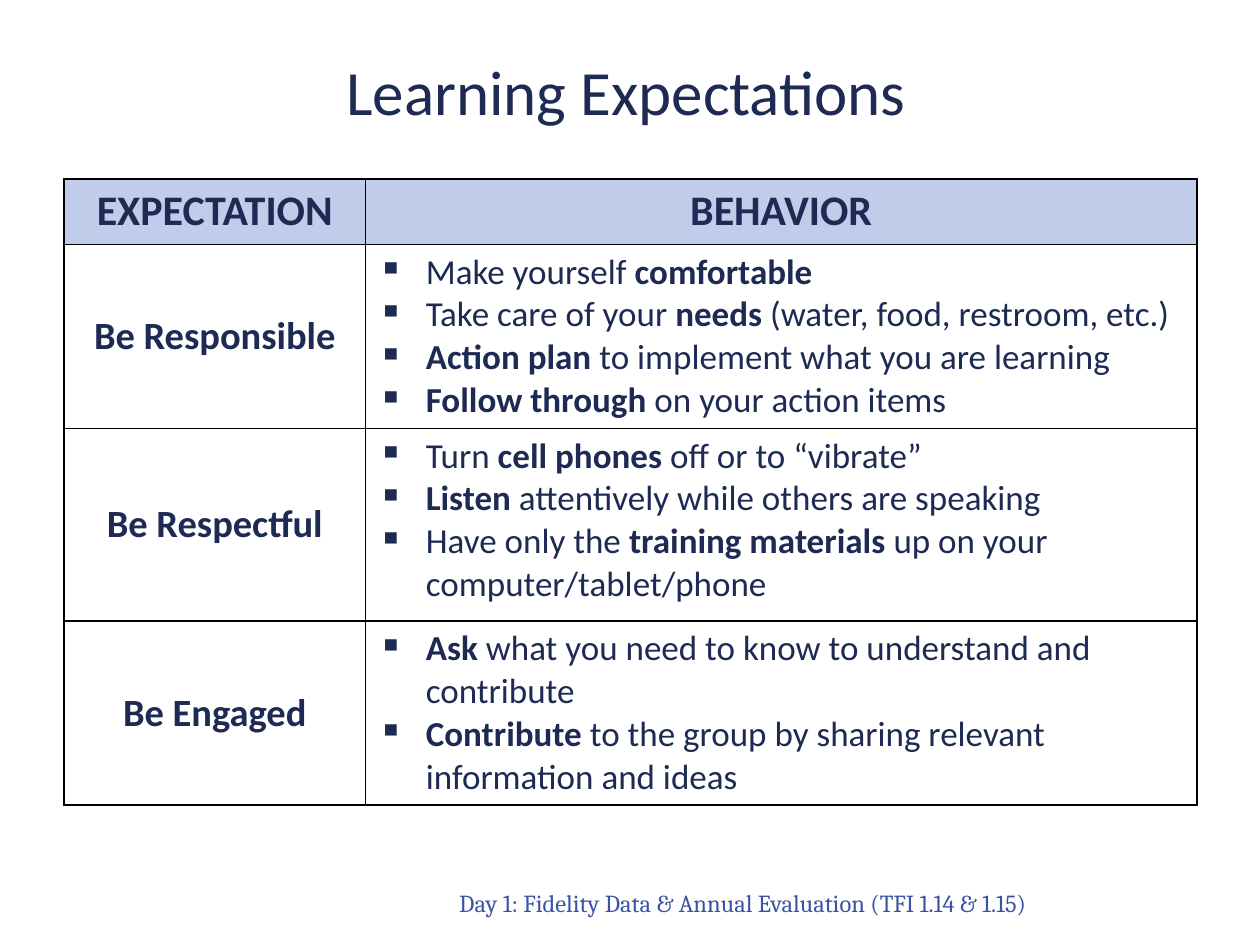
from lxml.etree import SubElement
from pptx import Presentation
from pptx.dml.color import RGBColor
from pptx.enum.text import MSO_ANCHOR as Anchor, PP_ALIGN as Align
from pptx.oxml.ns import qn
from pptx.util import Inches, Pt

COLORS = {"navy": "1D2A53", "blue": "3A53A5", "header": "C1CCEB",
          "white": "FFFFFF", "border": "000000"}

TITLE = "Learning Expectations"
FOOTER = "Day 1: Fidelity Data & Annual Evaluation (TFI 1.14 & 1.15)"
HEADERS = ["EXPECTATION", "BEHAVIOR"]
# Bold words stand between asterisks
EXPECTATIONS = [
    ("Be Responsible", [
        "Make yourself *comfortable*",
        "Take care of your *needs* (water, food, restroom, etc.)",
        "*Action plan *to implement what you are learning",
        "*Follow through *on your action items"]),
    ("Be Respectful", [
        "Turn *cell phones* off or to “vibrate”",
        "*Listen *attentively while others are speaking",
        "Have only the *training materials *up on your computer/tablet/phone"]),
    ("Be Engaged", [
        "*Ask* what you need to know to understand and contribute",
        "*Contribute *to the group by sharing relevant information and ideas"]),
]
COLUMN_WIDTHS = [2.39, 6.6]
ROW_HEIGHTS = [0.52, 1.46, 1.53, 1.46]
INDENT = Inches(0.38)


def style_font(font, size, color="navy", name="Calibri", bold=False):
    font.name = name
    font.size = Pt(size)
    font.bold = bold
    font.color.rgb = RGBColor.from_string(COLORS[color])


def add_title(slide):
    title = slide.shapes.title
    title.left, title.top = Inches(0.51), Inches(0.38)
    title.width, title.height = Inches(8.92), Inches(0.68)
    title.text_frame.text = TITLE
    title.text_frame.vertical_anchor = Anchor.MIDDLE
    heading = title.text_frame.paragraphs[0]
    heading.alignment = Align.CENTER
    style_font(heading.runs[0].font, 36)


def add_footer(slide):
    frame = slide.shapes.add_textbox(
        Inches(2.85), Inches(6.69), Inches(5.49), Inches(0.64)).text_frame
    frame.word_wrap = True
    frame.vertical_anchor = Anchor.BOTTOM
    frame.margin_right = Inches(0.19)
    frame.text = FOOTER
    line = frame.paragraphs[0]
    line.alignment = Align.RIGHT
    style_font(line.runs[0].font, 14, "blue", "Cambria")


def add_borders(cell):
    properties = cell._tc.get_or_add_tcPr()
    for side in ("a:lnL", "a:lnR", "a:lnT", "a:lnB"):
        border = SubElement(properties, qn(side), w=str(Pt(1)))
        fill = SubElement(border, qn("a:solidFill"))
        SubElement(fill, qn("a:srgbClr"), val=COLORS["border"])


def format_cell(cell, fill):
    add_borders(cell)
    cell.fill.solid()
    cell.fill.fore_color.rgb = RGBColor.from_string(COLORS[fill])


def fill_label(cell, label, size, fill="white"):
    format_cell(cell, fill)
    cell.vertical_anchor = Anchor.MIDDLE
    cell.text_frame.text = label
    paragraph = cell.text_frame.paragraphs[0]
    paragraph.alignment = Align.CENTER
    style_font(paragraph.runs[0].font, size, bold=True)


def add_bullet(paragraph):
    properties = paragraph._p.get_or_add_pPr()
    properties.set("marL", str(INDENT))
    properties.set("indent", str(-INDENT))
    color = SubElement(properties, qn("a:buClr"))
    SubElement(color, qn("a:srgbClr"), val=COLORS["navy"])
    SubElement(properties, qn("a:buChar"), char="▪")


def fill_behaviors(cell, behaviors):
    format_cell(cell, "white")
    frame = cell.text_frame
    for index, behavior in enumerate(behaviors):
        paragraph = frame.add_paragraph() if index else frame.paragraphs[0]
        add_bullet(paragraph)
        for part, words in enumerate(behavior.split("*")):
            if words:
                run = paragraph.add_run()
                run.text = words
                style_font(run.font, 20, bold=part % 2 == 1)


def add_expectations(slide):
    table = slide.shapes.add_table(
        len(ROW_HEIGHTS), len(COLUMN_WIDTHS), Inches(0.51), Inches(1.42),
        Inches(sum(COLUMN_WIDTHS)), Inches(sum(ROW_HEIGHTS))).table
    table.horz_banding = False
    for column, width in zip(table.columns, COLUMN_WIDTHS):
        column.width = Inches(width)
    for row, height in zip(table.rows, ROW_HEIGHTS):
        row.height = Inches(height)

    for column, header in enumerate(HEADERS):
        fill_label(table.cell(0, column), header, 24, "header")
    for row, (expectation, behaviors) in enumerate(EXPECTATIONS, start=1):
        fill_label(table.cell(row, 0), expectation, 22)
        fill_behaviors(table.cell(row, 1), behaviors)


def main():
    deck = Presentation()
    deck.slide_width, deck.slide_height = Inches(10), Inches(7.5)
    slide = deck.slides.add_slide(deck.slide_layouts[5])  # title only
    add_footer(slide)
    add_title(slide)
    add_expectations(slide)
    deck.save("out.pptx")


if __name__ == "__main__":
    main()
